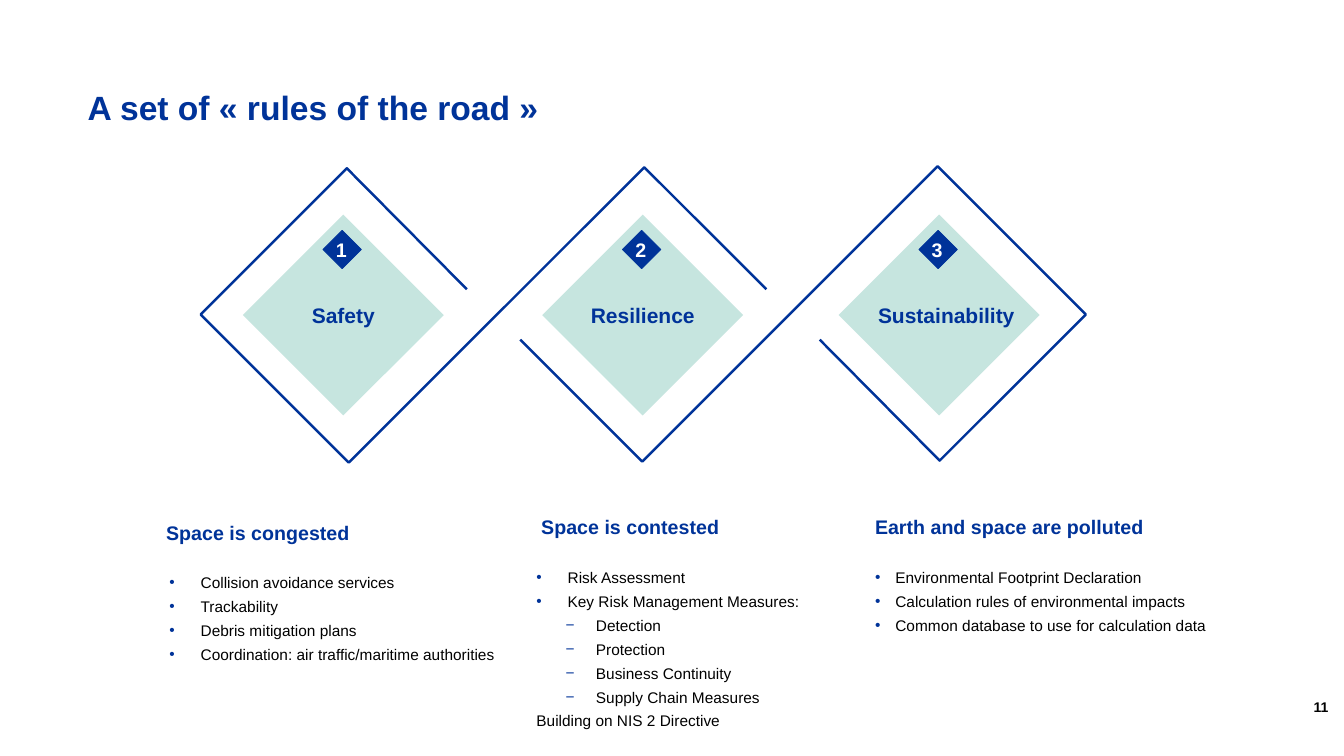
from pptx import Presentation
from pptx.dml.color import RGBColor
from pptx.enum.shapes import MSO_SHAPE as Preset
from pptx.enum.text import MSO_ANCHOR as Anchor, MSO_AUTO_SIZE as AutoSize, PP_ALIGN as Align
from pptx.oxml.ns import qn
from pptx.util import Pt
from lxml.etree import SubElement

PX = 9144
COLORS = {"navy": "003399", "mint": "C6E5DF", "white": "FFFFFF", "black": "000000"}
RIBBON = [(760, 287), (639, 166), (346, 459), (199, 312), (344, 167), (463, 287)]
RIBBON_TURN = (1276, 624)

PILLARS = [
    {"name": "Safety", "diamond": (270, 242, 141, 141), "label": (281, 300, 119, 25)},
    {"name": "Resilience", "diamond": (567, 242, 141, 141), "label": (578, 300, 119, 25)},
    {"name": "Sustainability", "diamond": (861, 242, 141, 141), "label": (869, 300, 139, 25)},
]
TOPICS = [
    {"heading": "Space is congested", "heading_box": (155, 512, 267, 34),
     "list_box": (158, 562, 374, 125), "indent": 31,
     "items": [("•", "Collision avoidance services"), ("•", "Trackability"),
               ("•", "Debris mitigation plans"),
               ("•", "Coordination: air traffic/maritime authorities")]},
    {"heading": "Space is contested", "heading_box": (527, 506, 267, 34),
     "list_box": (522, 557, 312, 173), "indent": 31,
     "items": [("•", "Risk Assessment"), ("•", "Key Risk Management Measures:"),
               ("−", "Detection"), ("−", "Protection"), ("−", "Business Continuity"),
               ("−", "Supply Chain Measures"), (None, "Building on NIS 2 Directive")]},
    {"heading": "Earth and space are polluted", "heading_box": (858, 506, 299, 34),
     "list_box": (858, 557, 384, 89), "indent": 20,
     "items": [("•", "Environmental Footprint Declaration"),
               ("•", "Calculation rules of environmental impacts"),
               ("•", "Common database to use for calculation data")]},
]


def rgb(color):
    return RGBColor.from_string(COLORS[color])


def emu(box):
    return [length * PX for length in box]


def set_font(paragraph, size, color, bold):
    font = paragraph.font
    font.name, font.size, font.bold = "Arial", Pt(size), bold
    font.color.rgb = rgb(color)


def place(placeholder, box):
    placeholder.left, placeholder.top, placeholder.width, placeholder.height = emu(box)


def add_text(slide, box, text, size, color="navy", align=Align.LEFT,
             anchor=Anchor.TOP, inset=True, wrap=True):
    frame = slide.shapes.add_textbox(*emu(box)).text_frame
    frame.word_wrap = wrap
    frame.vertical_anchor = anchor
    if not inset:
        frame.margin_left = frame.margin_right = frame.margin_top = frame.margin_bottom = 0
    line = frame.paragraphs[0]
    line.text, line.alignment = text, align
    set_font(line, size, color, True)


def add_tilted_square(slide, box, color, outlined=False):
    square = slide.shapes.add_shape(Preset.RECTANGLE, *emu(box))
    square.rotation = 315
    square.shadow.inherit = False
    square.fill.solid()
    square.fill.fore_color.rgb = rgb(color)
    if outlined:
        square.line.color.rgb = rgb(color)
        square.line.width = Pt(0.5)
    else:
        square.line.fill.background()


def add_title(slide, box):
    title = slide.shapes.title
    place(title, box)
    title.fill.solid()
    title.fill.fore_color.rgb = rgb("white")
    frame = title.text_frame
    frame.text = "A set of «\u00a0rules of the road\u00a0»"
    frame.auto_size = AutoSize.NONE
    frame.vertical_anchor = Anchor.MIDDLE
    line = frame.paragraphs[0]
    line.alignment, line.line_spacing = Align.LEFT, 0.9
    set_font(line, 24, "navy", True)


def add_ribbon(slide, points):
    builder = slide.shapes.build_freeform(*points[0], scale=PX)
    builder.add_line_segments(points[1:], close=False)
    ribbon = builder.convert_to_shape()
    ribbon.shadow.inherit = False
    ribbon.fill.background()
    ribbon.line.color.rgb = rgb("navy")
    ribbon.line.width = Pt(1.75)


def add_pillar(slide, number, pillar):
    left, top, width, height = pillar["diamond"]
    add_tilted_square(slide, pillar["diamond"], "mint")
    add_tilted_square(slide, (left + 56, top - 8, 27, 27), "navy", outlined=True)
    add_text(slide, pillar["label"], pillar["name"], 15, align=Align.CENTER,
             anchor=Anchor.MIDDLE, inset=False)
    add_text(slide, (left + 60, top - 12, 17, 36), str(number), 14, "white",
             Align.CENTER, Anchor.MIDDLE, inset=False, wrap=False)


def set_bullet(paragraph, bullet, indent):
    properties = paragraph._p.get_or_add_pPr()
    margin, hanging = {"•": (indent, indent), "−": (59, 30), None: (0, 0)}[bullet]
    properties.set("marL", str(margin * PX))
    properties.set("indent", str(-hanging * PX))
    if bullet is None:
        SubElement(properties, qn("a:buNone"))
        return
    bullet_color = SubElement(properties, qn("a:buClr"))
    SubElement(bullet_color, qn("a:srgbClr")).set("val", COLORS["navy"])
    SubElement(properties, qn("a:buFont")).set("typeface", "Arial")
    SubElement(properties, qn("a:buChar")).set("char", bullet)


def add_topic(slide, body, topic):
    add_text(slide, topic["heading_box"], topic["heading"], 14)
    place(body, topic["list_box"])
    frame = body.text_frame
    frame.text = "\n".join(text for _, text in topic["items"])
    frame.auto_size = AutoSize.NONE
    frame.vertical_anchor = Anchor.TOP
    for item, (bullet, _) in zip(frame.paragraphs, topic["items"]):
        item.level = 1 if bullet == "−" else 0
        item.line_spacing = 1.07
        item.space_before, item.space_after = Pt(0), Pt(3)
        set_bullet(item, bullet, topic["indent"])
        set_font(item, 11, "black", False)


def main():
    deck = Presentation()
    deck.slide_width, deck.slide_height = emu((1333, 750))
    slide = deck.slides.add_slide(deck.slide_layouts[4])
    *bodies, spare = list(slide.placeholders)[1:]
    spare.element.getparent().remove(spare.element)

    add_title(slide, (77, 64, 1165, 89))
    turn_x, turn_y = RIBBON_TURN
    add_ribbon(slide, RIBBON)
    add_ribbon(slide, [(turn_x - x, turn_y - y) for x, y in RIBBON])
    for number, pillar in enumerate(PILLARS, 1):
        add_pillar(slide, number, pillar)
    for body, topic in zip(bodies, TOPICS):
        add_topic(slide, body, topic)
    add_text(slide, (1293, 675, 41, 40), "11", 10, "black", anchor=Anchor.BOTTOM)
    deck.save("out.pptx")


if __name__ == "__main__":
    main()
